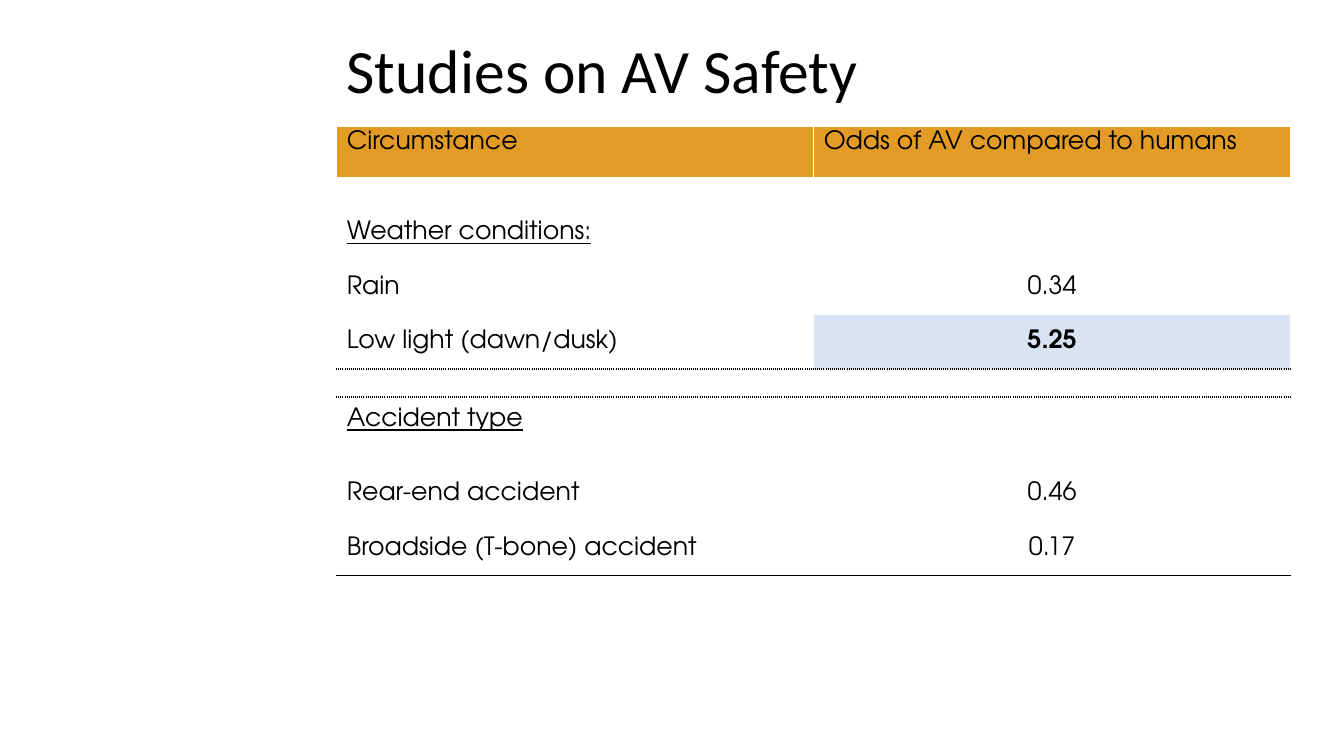
from lxml import etree
from pptx import Presentation, util as u
from pptx.dml.color import RGBColor
from pptx.enum import text
from pptx.oxml import ns


def color(hex_value):
    return RGBColor.from_string(hex_value)


def add_border(cell, position, side, hex_value, points, dash):
    line = etree.Element(ns.qn(f"a:ln{side}"), w=str(u.Pt(points)))
    fill = etree.SubElement(line, ns.qn("a:solidFill"))
    etree.SubElement(fill, ns.qn("a:srgbClr"), val=hex_value)
    etree.SubElement(line, ns.qn("a:prstDash"), val=dash)
    cell._tc.get_or_add_tcPr().insert(position, line)


deck = Presentation()
deck.slide_width, deck.slide_height = u.Inches(13.33), u.Inches(7.5)
slide = deck.slides.add_slide(deck.slide_layouts[6])

# Title
title = slide.shapes.add_textbox(
    u.Inches(3.34), u.Inches(0), u.Inches(8.71), u.Inches(1.45)).text_frame
title.word_wrap = True
title.vertical_anchor = text.MSO_ANCHOR.MIDDLE
heading = title.paragraphs[0]
heading.line_spacing = 0.9
heading_run = heading.add_run()
heading_run.text = "Studies on AV Safety"
for name, value in {"name": "Calibri", "size": u.Pt(44)}.items():
    setattr(heading_run.font, name, value)
heading_run.font.color.rgb = color("000000")

# Odds table: row height, circumstance, odds
odds_rows = [
    (0.52, "Circumstance", "Odds of AV compared to humans"),
    (0.27, "", ""),
    (0.54, "Weather conditions:", ""),
    (0.54, "Rain", "0.34"),
    (0.54, "Low light (dawn/dusk)", "5.25"),
    (0.28, "", ""),
    (0.69, "Accident type", ""),
    (0.54, "Rear-end accident", "0.46"),
    (0.54, "Broadside (T-bone) accident", "0.17"),
]
section_rows = (2, 6)
fills = {(0, 0): "E29C25", (0, 1): "E29C25", (4, 1): "DAE3F3"}
plain = ("FFFFFF", 1, "solid")
dotted = ("000000", 1.5, "sysDot")
rules_below = {0: ("FFFFFF", 3, "solid"), 4: dotted, 5: dotted,
               8: ("000000", 1, "solid")}

odds = slide.shapes.add_table(
    len(odds_rows), 2, u.Inches(3.34), u.Inches(1.25),
    u.Inches(9.46), u.Inches(4.46)).table
odds.first_row = odds.horz_banding = False

for r, (height, *entries) in enumerate(odds_rows):
    odds.rows[r].height = u.Inches(height)
    for c, entry in enumerate(entries):
        cell = odds.cell(r, c)
        if r > 0:
            cell.vertical_anchor = text.MSO_ANCHOR.MIDDLE
        if (r, c) in fills:
            cell.fill.solid()
            cell.fill.fore_color.rgb = color(fills[r, c])
        else:
            cell.fill.background()

        # Neighbouring rows share the rule between them
        borders = {"L": plain, "R": plain,
                   "T": rules_below.get(r - 1, plain),
                   "B": rules_below.get(r, plain)}
        for position, (side, style) in enumerate(borders.items()):
            add_border(cell, position, side, *style)

        paragraph = cell.text_frame.paragraphs[0]
        if not entry:
            # Small type keeps the spacer rows low
            etree.SubElement(paragraph._p, ns.qn("a:endParaRPr"), sz="600")
            continue
        if r > 0 and c == 1:
            paragraph.alignment = text.PP_ALIGN.CENTER
        run = paragraph.add_run()
        run.text = entry
        formats = {"name": "TeX Gyre Adventor", "size": u.Pt(18),
                   "bold": entry == "5.25", "underline": r in section_rows}
        for name, value in formats.items():
            setattr(run.font, name, value)
        run.font.color.rgb = color("000000")

# The accident heading sits high in its row
odds.cell(6, 0).margin_bottom = u.Inches(0.3)

deck.save("out.pptx")
